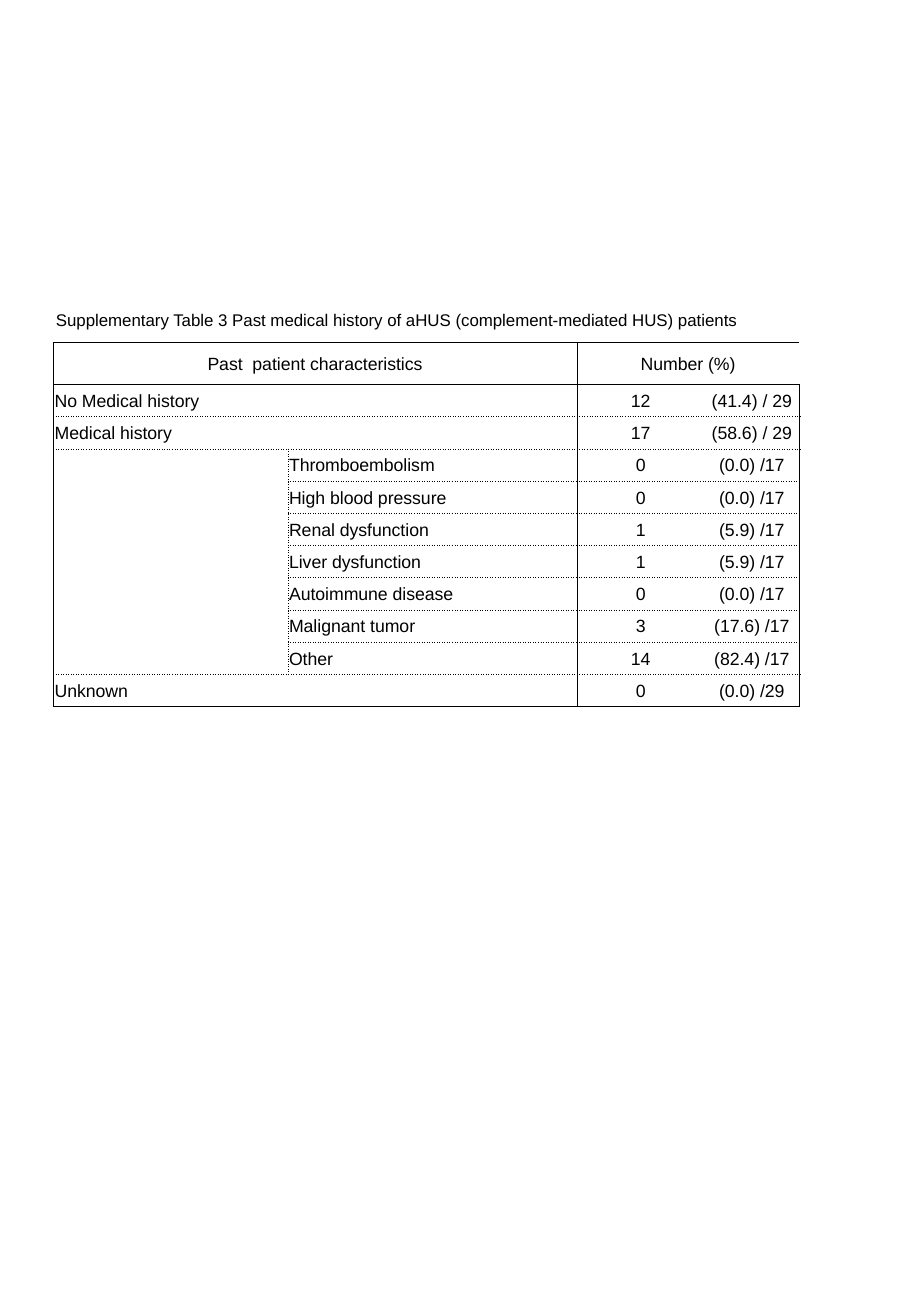
from dataclasses import dataclass
from lxml.etree import SubElement
from pptx import Presentation
from pptx.dml.color import RGBColor as Color
from pptx.enum.text import MSO_ANCHOR as Anchor, MSO_AUTO_SIZE as Fit, PP_ALIGN as Align
from pptx.oxml.ns import qn
from pptx.util import Pt


@dataclass(frozen=True)
class Theme:
    ink: str = "000000"
    font: str = "Arial"
    title: float = 10
    body: float = 10.5
    thin: float = 0.5
    thick: float = 1


THEME = Theme()
SCALE = 914400 // 200
SIZE = (1500, 2166)
TITLE_BOX = (72, 500, 1338, 54)
TABLE_BOX = (88, 564, 1228, 599)
COLS = (386, 476, 210, 156)
HEAD = 69
INSET = 2
SOLID, DOT = "solid", "sysDot"

TITLE = "Supplementary Table 3 Past medical history of aHUS (complement-mediated HUS) patients"
ROWS = (
    ("Past  patient characteristics", "", "Number (%)", ""),
    ("No Medical history", "", "12", "(41.4) / 29"),
    ("Medical history", "", "17", "(58.6) / 29"),
    ("", "Thromboembolism", "0", "(0.0) /17"),
    ("", "High blood pressure", "0", "(0.0) /17"),
    ("", "Renal dysfunction", "1", "(5.9) /17"),
    ("", "Liver dysfunction", "1", "(5.9) /17"),
    ("", "Autoimmune disease", "0", "(0.0) /17"),
    ("", "Malignant tumor", "3", "(17.6) /17"),
    ("", "Other", "14", "(82.4) /17"),
    ("Unknown", "", "0", "(0.0) /29"),
)


def px(count):
    return count * SCALE


def style(para, size, align):
    para.alignment = align
    para.font.name = THEME.font
    para.font.size = Pt(size)
    para.font.bold = False
    para.font.color.rgb = Color.from_string(THEME.ink)


def is_sub(row):
    return 0 <= row < len(ROWS) and not ROWS[row][0]


def level_rule(row, col):
    if row == len(ROWS):
        return THEME.thin, SOLID
    if row < 2:
        return THEME.thick, SOLID
    if col == 0 and is_sub(row) and is_sub(row - 1):
        return None
    return THEME.thin, DOT


def upright_rule(row, col):
    if col == len(COLS) or (row == 0 and col == 0):
        return THEME.thick, SOLID
    if col in (0, 2):
        return THEME.thin, SOLID
    if col == 1 and is_sub(row):
        return THEME.thin, DOT
    return None


def add_edge(props, place, side, rule):
    width, dash = rule or (0, SOLID)
    line = SubElement(props, qn(f"a:ln{side}"), w=str(Pt(width)))
    if rule:
        fill = SubElement(line, qn("a:solidFill"))
        SubElement(fill, qn("a:srgbClr"), val=THEME.ink)
        SubElement(line, qn("a:prstDash"), val=dash)
    else:
        SubElement(line, qn("a:noFill"))
    props.insert(place, line)


def draw_cell(cell, row, col):
    cell.fill.background()
    cell.vertical_anchor = Anchor.MIDDLE
    cell.margin_left = cell.margin_right = cell.margin_top = px(INSET)
    cell.margin_bottom = 0
    cell.text = ROWS[row][col]
    centred = row == 0 or col > 1
    style(cell.text_frame.paragraphs[0], THEME.body, Align.CENTER if centred else Align.LEFT)
    edges = (
        ("L", upright_rule(row, col)),
        ("R", upright_rule(row, col + 1)),
        ("T", level_rule(row, col)),
        ("B", level_rule(row + 1, col)),
    )
    props = cell._tc.get_or_add_tcPr()
    for place, (side, rule) in enumerate(edges):
        add_edge(props, place, side, rule)


def draw_title(slide, box):
    title = slide.shapes.title
    title.left, title.top, title.width, title.height = map(px, box)
    frame = title.text_frame
    frame.text = TITLE
    frame.word_wrap = True
    frame.auto_size = Fit.NONE
    frame.vertical_anchor = Anchor.TOP
    style(frame.paragraphs[0], THEME.title, Align.LEFT)


def draw_table(slide, box):
    table = slide.shapes.add_table(len(ROWS), len(COLS), *map(px, box)).table
    table.first_row = table.horz_banding = False
    for col, width in zip(table.columns, COLS):
        col.width = px(width)
    step = (box[3] - HEAD) // (len(ROWS) - 1)
    for index, row in enumerate(table.rows):
        row.height = px(step if index else HEAD)
        for col, cell in enumerate(row.cells):
            draw_cell(cell, index, col)
        if not is_sub(index):
            table.cell(index, 0).merge(table.cell(index, 1))
    table.cell(0, 2).merge(table.cell(0, 3))


def main():
    deck = Presentation()
    deck.slide_width, deck.slide_height = map(px, SIZE)
    slide = deck.slides.add_slide(deck.slide_layouts[5])
    draw_table(slide, TABLE_BOX)
    draw_title(slide, TITLE_BOX)
    deck.save("out.pptx")


if __name__ == "__main__":
    main()
